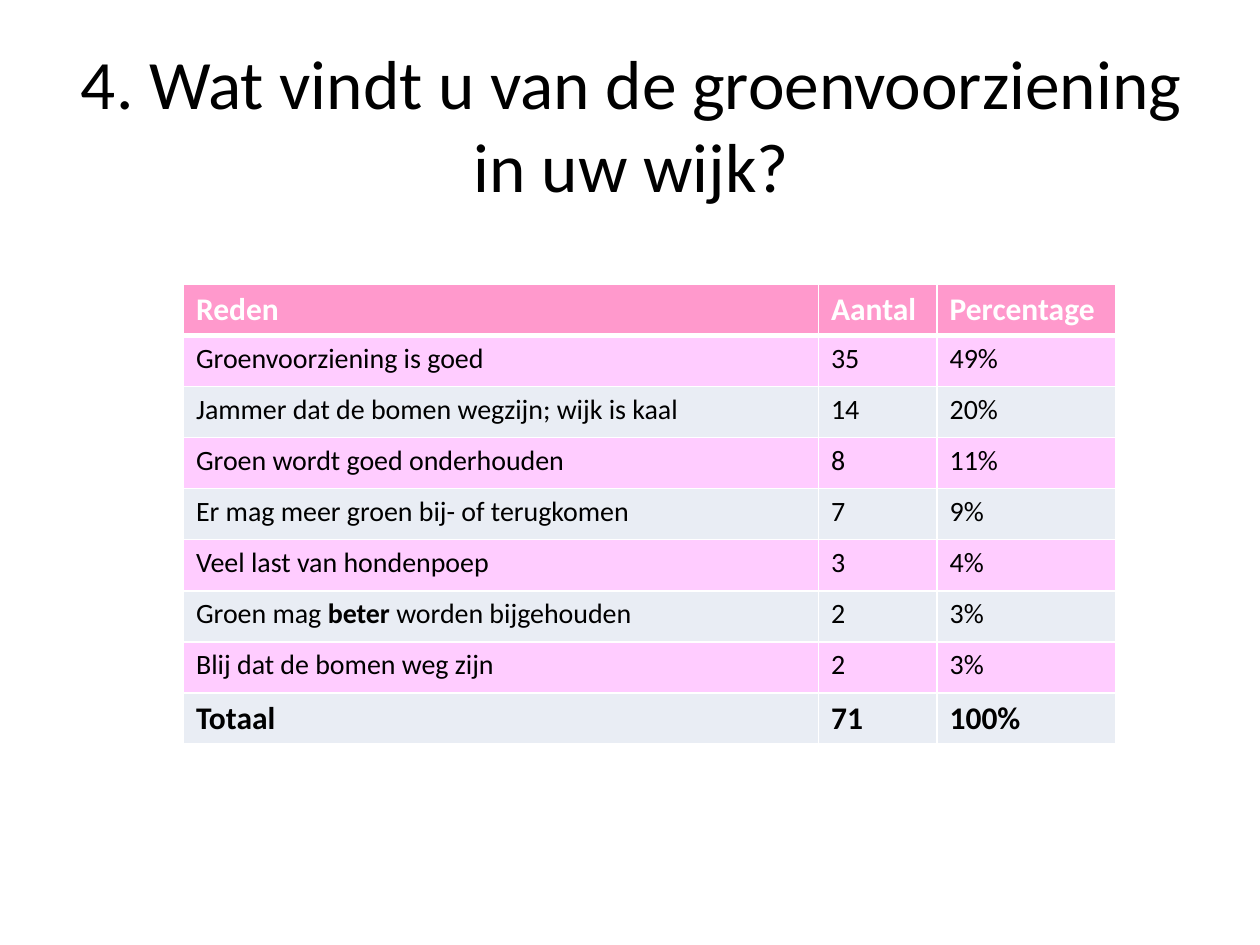
from lxml import etree
from pptx import Presentation
from pptx.dml.color import RGBColor
from pptx.enum import text
from pptx.oxml import ns
from pptx.util import Cm, Pt

FONT = "Calibri"
BLACK, WHITE = "000000", "FFFFFF"
HEADER_PINK, ROW_PINK, ROW_GREY = "FF99CC", "FFCCFF", "E9EDF4"
COLUMN_WIDTHS = (12.8, 2.39, 3.61)
ROW_HEIGHT = 1.03

# A reason is a list of (words, bold) runs where its emphasis varies.
REASONS = [
    ("Reden", "Aantal", "Percentage"),
    ("Groenvoorziening is goed", "35", "49%"),
    ("Jammer dat de bomen wegzijn; wijk is kaal", "14", "20%"),
    ("Groen wordt goed onderhouden", "8", "11%"),
    ("Er mag meer groen bij- of terugkomen", "7", "9%"),
    ("Veel last van hondenpoep", "3", "4%"),
    ([("Groen mag ", False), ("beter ", True), ("worden bijgehouden", False)],
     "2", "3%"),
    ("Blij dat de bomen weg zijn", "2", "3%"),
    ("Totaal", "71", "100%"),
]


def colour(hex_code):
    return RGBColor.from_string(hex_code)


def add_run(paragraph, words, size, hex_code, bold=False):
    run = paragraph.add_run()
    run.text = words
    run.font.name = FONT
    run.font.size = Pt(size)
    run.font.bold = bold
    run.font.color.rgb = colour(hex_code)


def set_borders(cell, bottom_width):
    """Draw white lines round a cell, 1 pt wide except for the bottom one."""
    properties = cell._tc.get_or_add_tcPr()
    widths = {"lnL": 1, "lnR": 1, "lnT": 1, "lnB": bottom_width}
    for position, (side, width) in enumerate(widths.items()):
        line = etree.Element(ns.qn(f"a:{side}"), w=str(Pt(width)))
        fill = etree.SubElement(line, ns.qn("a:solidFill"))
        etree.SubElement(fill, ns.qn("a:srgbClr"), val=WHITE)
        properties.insert(position, line)


def fill_cell(cell, content, fill, size, hex_code, bold, bottom_width):
    cell.fill.solid()
    cell.fill.fore_color.rgb = colour(fill)
    set_borders(cell, bottom_width)
    runs = [(content, bold)] if isinstance(content, str) else content
    for words, run_bold in runs:
        add_run(cell.text_frame.paragraphs[0], words, size, hex_code, run_bold)


def add_question(slide):
    question = slide.shapes.title
    question.left, question.top = Cm(1.3), Cm(1.73)
    question.width, question.height = Cm(22.86), Cm(3.18)
    frame = question.text_frame
    frame.word_wrap = True
    frame.auto_size = text.MSO_AUTO_SIZE.NONE
    frame.vertical_anchor = text.MSO_ANCHOR.MIDDLE
    paragraph = frame.paragraphs[0]
    paragraph.alignment = text.PP_ALIGN.CENTER
    add_run(paragraph, "4. Wat vindt u van de groenvoorziening in uw wijk?",
            39.6, BLACK)
    # The closing line break lifts the centred question above the table.
    paragraph.add_line_break()
    paragraph.font.size = Pt(39.6)


def add_reasons(slide):
    last = len(REASONS) - 1
    table = slide.shapes.add_table(
        len(REASONS), len(COLUMN_WIDTHS), Cm(3.7), Cm(5.73),
        Cm(sum(COLUMN_WIDTHS)), Cm(ROW_HEIGHT * len(REASONS))).table
    for column, width in zip(table.columns, COLUMN_WIDTHS):
        column.width = Cm(width)
    for index, (row, contents) in enumerate(zip(table.rows, REASONS)):
        row.height = Cm(ROW_HEIGHT)
        header = index == 0
        outer = index in (0, last)
        band = ROW_PINK if index % 2 else ROW_GREY
        for cell, content in zip(row.cells, contents):
            fill_cell(cell, content,
                      fill=HEADER_PINK if header else band,
                      size=18 if outer else 16,
                      hex_code=WHITE if header else BLACK,
                      bold=outer,
                      bottom_width=3 if header else 1)


def main():
    deck = Presentation()
    deck.slide_width, deck.slide_height = Cm(25.4), Cm(19.05)
    slide = deck.slides.add_slide(deck.slide_layouts[5])
    add_question(slide)
    add_reasons(slide)
    deck.save("out.pptx")


if __name__ == "__main__":
    main()
